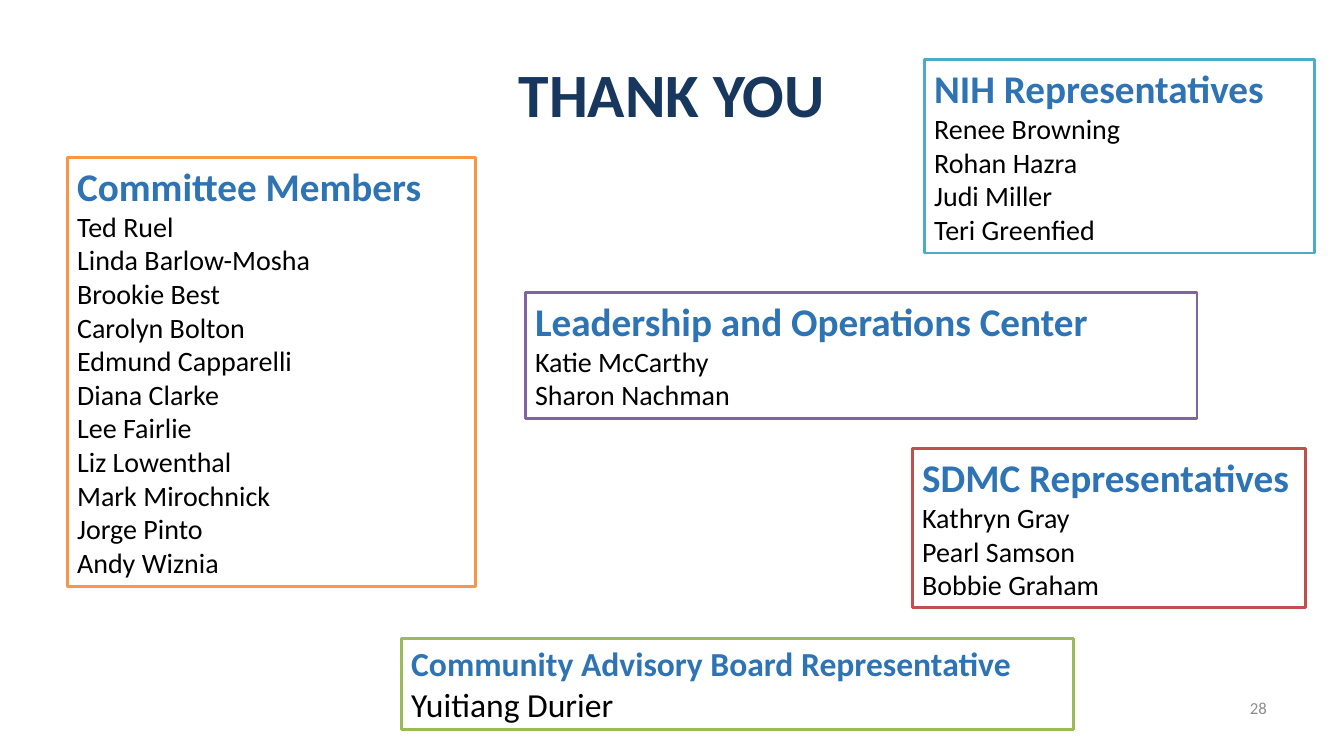
"""Builds the thank-you slide with one framed list of names per group."""
from pptx import Presentation
from pptx import util as u
from pptx.dml import color
from pptx.enum import shapes, text


def rgb(value):
    return color.RGBColor.from_string(value)


def write(box, content, size, ink="000000", bold=False, align=text.PP_ALIGN.LEFT,
          anchor=text.MSO_ANCHOR.TOP, first=True):
    frame = box.text_frame
    frame.word_wrap = True
    frame.vertical_anchor = anchor
    para = frame.paragraphs[0] if first else frame.add_paragraph()
    para.alignment = align
    span = para.add_run()
    span.text = content
    span.font.name = "Calibri"
    span.font.size = u.Pt(size)
    span.font.bold = bold
    span.font.color.rgb = rgb(ink)


deck = Presentation()
deck.slide_width, deck.slide_height = u.Pt(960), u.Pt(540)
page = deck.slides.add_slide(deck.slide_layouts[6])

title = page.shapes.add_textbox(u.Pt(48), u.Pt(21.6), u.Pt(864), u.Pt(90))
write(title, "THANK YOU", 44, ink="17375E", bold=True,
      align=text.PP_ALIGN.CENTER, anchor=text.MSO_ANCHOR.MIDDLE)

number = page.shapes.add_textbox(u.Pt(688), u.Pt(491), u.Pt(224), u.Pt(28.8))
write(number, "28", 12, ink="8C8C8C",
      align=text.PP_ALIGN.RIGHT, anchor=text.MSO_ANCHOR.MIDDLE)

groups = [
    ("Committee Members", 28, 20, "F79646", (48, 112.3, 291.6, 306.7),
     ["Ted Ruel", "Linda Barlow-Mosha", "Brookie Best", "Carolyn Bolton",
      "Edmund Capparelli", "Diana Clarke", "Lee Fairlie", "Liz Lowenthal",
      "Mark Mirochnick", "Jorge Pinto", "Andy Wiznia"]),
    ("NIH Representatives", 28, 20, "4BACC6", (660.2, 42.5, 278.6, 138.2),
     ["Renee Browning", "Rohan Hazra", "Judi Miller", "Teri Greenfied"]),
    ("SDMC Representatives", 28, 20, "C0504D", (651.6, 320.4, 280.8, 113.8),
     ["Kathryn Gray", "Pearl Samson", "Bobbie Graham"]),
    ("Community Advisory Board Representative", 24, 24, "9BBB59",
     (286.6, 455.8, 480, 65.5), ["Yuitiang Durier"]),
    ("Leadership and Operations Center", 28, 20, "8064A2",
     (375.1, 208.8, 480, 90), ["Katie McCarthy", "Sharon Nachman"]),
]

for heading, heading_size, name_size, border, place, names in groups:
    box = page.shapes.add_shape(shapes.MSO_SHAPE.RECTANGLE, *map(u.Pt, place))
    box.shadow.inherit = False
    box.fill.solid()
    box.fill.fore_color.rgb = rgb("FFFFFF")
    box.line.color.rgb = rgb(border)
    box.line.width = u.Pt(2)
    box.text_frame.auto_size = text.MSO_AUTO_SIZE.SHAPE_TO_FIT_TEXT
    write(box, heading, heading_size, ink="2E74B5", bold=True)
    for name in names:
        write(box, name, name_size, first=False)

deck.save("out.pptx")
